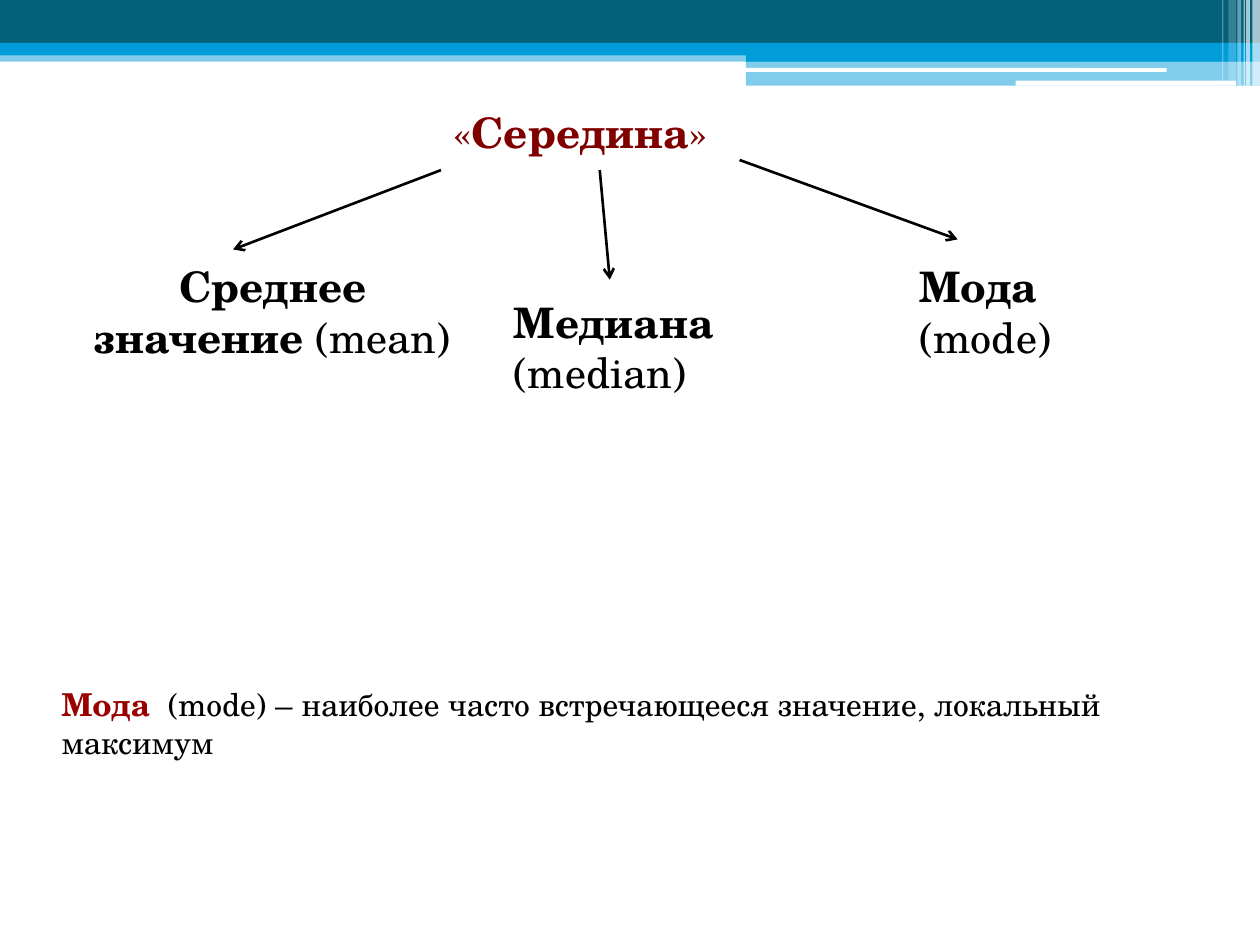
from lxml import etree
from pptx import Presentation
from pptx import util as u
from pptx.dml.color import RGBColor
from pptx.enum import shapes, text
from pptx.oxml.ns import qn

W, H = 10, 7.5
FONT = "TeX Gyre Schola"
BLACK, WHITE, RED, MAROON = "000000", "FFFFFF", "990000", "800000"
TEAL, BLUE = "04617B", "009DD9"

# left, top, width, height, colour, opacity in percent
BANDS = [
    (0, 0.4, W, 0.09, BLUE, 50),
    (0, 0, W, 0.34, TEAL, 100),
    (0, 0.34, W, 0.1, BLUE, 100),
    (5.92, 0.39, 4.08, 0.1, BLUE, 100),
    (5.92, 0.48, 4.08, 0.2, BLUE, 50),
]
SLOTS = [(5.91, 0.54, 3.35, 0.03), (8.06, 0.64, 1.75, 0.04)]
# left, width, height, opacity in percent
STRIPES = [
    (9.94, 0.06, 0.68, 65), (9.89, 0.03, 0.68, 65), (9.87, 0.01, 0.68, 60),
    (9.82, 0.03, 0.68, 40), (9.75, 0.06, 0.64, 20), (9.7, 0.01, 0.64, 30),
]
ARROWS = [
    (3.5, 1.35, 1.85, 1.98),
    (4.76, 1.35, 4.84, 2.22),
    (5.87, 1.27, 7.6, 1.9),
]
# box, paragraphs of (words, bold, colour), format
TEXTS = [
    ((3.5, 0.8, 2.36, 0.5),
     [[("«", False, MAROON), ("Середина", True, MAROON), ("»", False, MAROON)]], {}),
    ((7.2, 2.02, 1.42, 0.91),
     [[("Мода", True, BLACK)], [("(mode)", False, BLACK)]], {}),
    ((3.98, 2.3, 1.81, 0.91),
     [[("Медиана", True, BLACK), (" (median)", False, BLACK)]], {}),
    ((0.51, 2.02, 3.31, 0.91),
     [[("Среднее значение", True, BLACK), (" (mean)", False, BLACK)]],
     {"align": text.PP_ALIGN.CENTER}),
    ((0.39, 5.39, 9.14, 0.9),
     [[("Мода ", True, RED),
       (" (mode) – наиболее часто встречающееся значение, локальный максимум",
        False, BLACK)]], {"size": 18}),
]


def paint(fill, color, alpha=100):
    fill.solid()
    fill.fore_color.rgb = RGBColor.from_string(color)
    if alpha < 100:
        tint = fill._xPr.find(qn("a:solidFill"))[0]
        etree.SubElement(tint, qn("a:alpha"), val=str(alpha * 1000))


def block(slide, box, color, alpha=100, kind=shapes.MSO_SHAPE.RECTANGLE):
    shape = slide.shapes.add_shape(kind, *map(u.Inches, box))
    shape.shadow.inherit = False
    shape.line.fill.background()
    paint(shape.fill, color, alpha)


def arrow(slide, ends):
    link = slide.shapes.add_connector(
        shapes.MSO_CONNECTOR.STRAIGHT, *map(u.Inches, ends))
    link.line.width = u.Pt(1.5)
    paint(link.line.fill, BLACK)
    etree.SubElement(link.line._get_or_add_ln(), qn("a:tailEnd"), type="arrow")
    etree.SubElement(link._element.spPr, qn("a:effectLst"))


def write(slide, box, paras, size=24, align=text.PP_ALIGN.LEFT):
    frame = slide.shapes.add_textbox(*map(u.Inches, box)).text_frame
    frame.word_wrap = True
    for i, runs in enumerate(paras):
        para = frame.add_paragraph() if i else frame.paragraphs[0]
        para.alignment = align
        for words, bold, color in runs:
            run = para.add_run()
            run.text = words
            run.font.name, run.font.size, run.font.bold = FONT, u.Pt(size), bold
            run.font.color.rgb = RGBColor.from_string(color)


def main():
    deck = Presentation()
    deck.slide_width, deck.slide_height = u.Inches(W), u.Inches(H)
    slide = deck.slides.add_slide(deck.slide_layouts[6])
    for *box, color, alpha in BANDS:
        block(slide, box, color, alpha)
    for box in SLOTS:
        block(slide, box, WHITE, kind=shapes.MSO_SHAPE.ROUNDED_RECTANGLE)
    for left, width, height, alpha in STRIPES:
        block(slide, (left, 0, width, height), WHITE, alpha)
    for ends in ARROWS:
        arrow(slide, ends)
    for box, paras, style in TEXTS:
        write(slide, box, paras, **style)
    deck.save("out.pptx")


if __name__ == "__main__":
    main()
